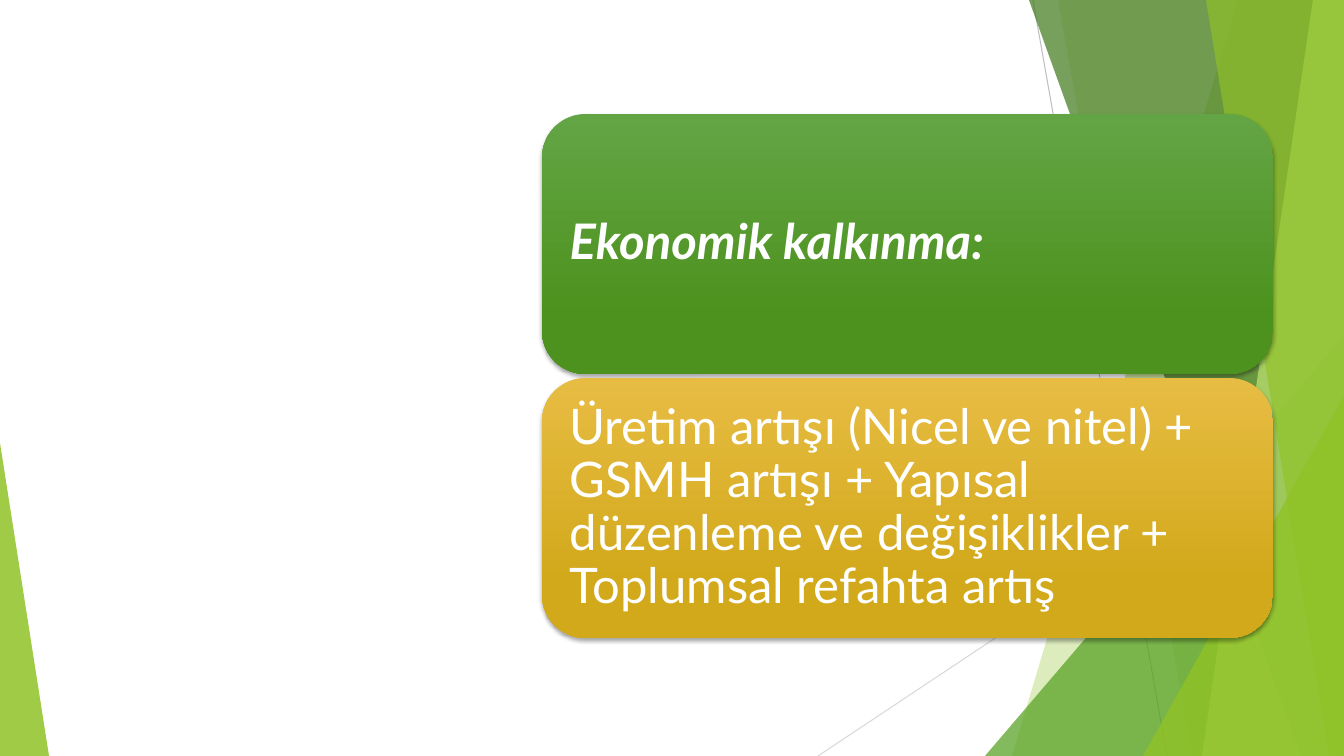
from lxml import etree
from pptx import Presentation
from pptx import util as u
from pptx.dml.color import RGBColor
from pptx.enum import shapes, text
from pptx.oxml.ns import qn

# Slide grid in px
PX = 914400 / 100.8
W, H = 1344, 756

# Colours
WHITE = RGBColor(0xFF, 0xFF, 0xFF)
GREY = RGBColor(0xBF, 0xBF, 0xBF)
PALE_GREY = RGBColor(0xD9, 0xD9, 0xD9)
LIME = RGBColor(0x90, 0xC2, 0x26)
PALE_LIME = RGBColor(0xC0, 0xE4, 0x74)
GREEN = RGBColor(0x54, 0xA0, 0x21)
DARK_GREEN = RGBColor(0x3F, 0x78, 0x19)
GREEN_TOP = RGBColor(0x63, 0xA5, 0x45)
GREEN_END = RGBColor(0x4D, 0x92, 0x1E)
GOLD_TOP = RGBColor(0xE7, 0xBC, 0x43)
GOLD_END = RGBColor(0xD2, 0xA9, 0x1B)

FONT = "Lato"


def px(n):
    return u.Emu(round(n * PX))


def add_line(s, x1, y1, x2, y2, color):
    line = s.shapes.add_connector(
        shapes.MSO_CONNECTOR.STRAIGHT, px(x1), px(y1), px(x2), px(y2))
    line.line.color.rgb = color
    line.line.width = u.Pt(0.75)
    etree.SubElement(line._element.spPr, qn("a:effectLst"))


def paint(sp, color, opacity):
    """Plain fill with an opacity in percent, no line, no shadow."""
    sp.fill.solid()
    sp.fill.fore_color.rgb = color
    clr = sp._element.spPr.find(f"{qn('a:solidFill')}/{qn('a:srgbClr')}")
    etree.SubElement(clr, qn("a:alpha"), val=str(opacity * 1000))
    sp.line.fill.background()
    sp.shadow.inherit = False


def add_band(s, top_x, bottom_x, color, opacity):
    """Full-height band from a slanted left edge to the slide's right edge."""
    builder = s.shapes.build_freeform(top_x, 0, scale=PX)
    builder.add_line_segments([(W, 0), (W, H), (bottom_x, H)], close=True)
    paint(builder.convert_to_shape(), color, opacity)


def add_corner(s, x, y, w, apex, color, opacity):
    """Triangle standing on the bottom edge of the slide."""
    sp = s.shapes.add_shape(
        shapes.MSO_SHAPE.ISOSCELES_TRIANGLE, px(x), px(y), px(w), px(H - y))
    sp.adjustments[0] = apex
    paint(sp, color, opacity)


def add_soft_shadow(sp):
    sp.shadow.inherit = False
    effects = sp._element.spPr.find(qn("a:effectLst"))
    shadow = etree.SubElement(
        effects, qn("a:outerShdw"), blurRad=str(u.Pt(3)), dist=str(u.Pt(2)),
        dir="5400000", rotWithShape="0")
    clr = etree.SubElement(shadow, qn("a:srgbClr"), val="000000")
    etree.SubElement(clr, qn("a:alpha"), val="35000")


def add_card(s, y, words, top, end, strong):
    sp = s.shapes.add_shape(
        shapes.MSO_SHAPE.ROUNDED_RECTANGLE, px(542), px(y), px(731), px(260))
    sp.fill.gradient()
    sp.fill.gradient_angle = 270
    for stop, color, position in zip(sp.fill.gradient_stops, (top, end), (0, 0.78)):
        stop.color.rgb = color
        stop.position = position
    sp.line.fill.background()
    add_soft_shadow(sp)

    tf = sp.text_frame
    tf.text = words
    tf.word_wrap = True
    tf.vertical_anchor = text.MSO_ANCHOR.MIDDLE
    tf.margin_left = tf.margin_right = tf.margin_top = tf.margin_bottom = px(15)
    p = tf.paragraphs[0]
    p.alignment = text.PP_ALIGN.LEFT
    p.line_spacing = 0.9
    font = p.runs[0].font
    font.name, font.size = FONT, u.Pt(35)
    font.color.rgb = WHITE
    font.bold = font.italic = strong


def main():
    prs = Presentation()
    prs.slide_width, prs.slide_height = px(W), px(H)
    s = prs.slides.add_slide(prs.slide_layouts[6])

    # Background facets, back to front
    add_line(s, 1033, 0, 1167, H, GREY)
    add_line(s, W, 406, 818, H, PALE_GREY)
    add_band(s, 1238, 1012, LIME, 30)
    add_band(s, 1058, 1192, LIME, 20)
    add_corner(s, 985, 336, 359, 1, GREEN, 72)
    add_band(s, 1029, 1301, DARK_GREEN, 70)
    add_band(s, 1313, 1202, PALE_LIME, 70)
    add_band(s, 1206, 1329, LIME, 65)
    add_corner(s, 1143, 396, 201, 1, LIME, 80)
    add_corner(s, 0, 443, 49, 0, LIME, 85)

    # Term and its definition
    cards = [
        ("Ekonomik kalkınma:", GREEN_TOP, GREEN_END, True),
        ("Üretim artışı (Nicel ve nitel) + GSMH artışı + Yapısal düzenleme "
         "ve değişiklikler + Toplumsal refahta artış", GOLD_TOP, GOLD_END, False),
    ]
    for i, (words, top, end, strong) in enumerate(cards):
        add_card(s, 114 + i * 264, words, top, end, strong)

    prs.save("out.pptx")


if __name__ == "__main__":
    main()
